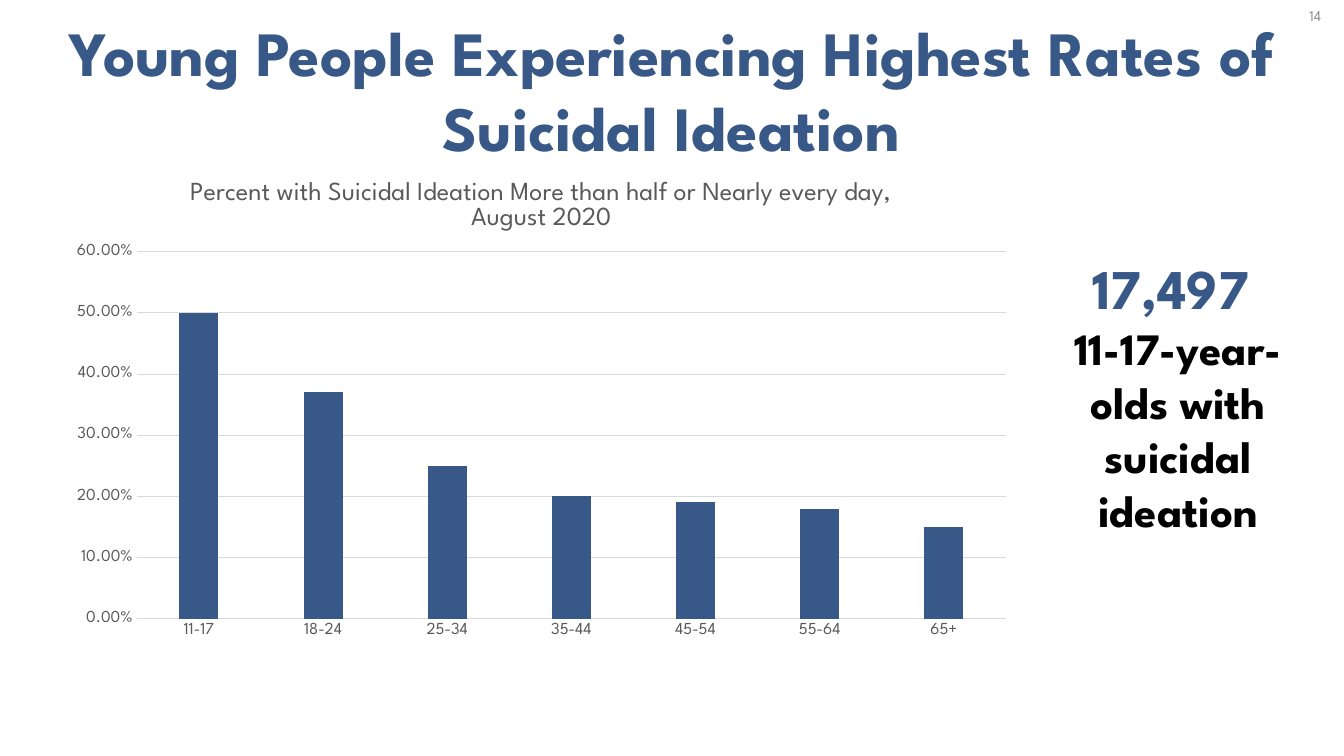
from dataclasses import dataclass

from lxml.etree import SubElement
from pptx import Presentation
from pptx.chart.data import CategoryChartData
from pptx.dml.color import RGBColor
from pptx.enum.chart import XL_CHART_TYPE, XL_TICK_MARK
from pptx.enum.text import MSO_ANCHOR, PP_ALIGN
from pptx.oxml.ns import qn
from pptx.util import Inches, Pt

FONT = "League Spartan"
BLUE, BLACK, GREY, PALE, RULE = "385988", "000000", "595959", "8C8C8C", "D9D9D9"


@dataclass
class Line:
    text: str
    size: float
    color: str
    bold: bool = True


@dataclass
class Label:
    box: tuple[float, float, float, float]
    lines: list[Line]
    anchor: MSO_ANCHOR = MSO_ANCHOR.MIDDLE


LABELS = [
    Label((0.56, 0.52, 12.2, 0.72),
          [Line("Young People Experiencing Highest Rates of Suicidal Ideation", 45, BLUE)]),
    Label((12.76, 0, 0.57, 0.31), [Line("14", 10.7, PALE, False)]),
    Label((10.17, 2.47, 3.03, 2.93),
          [Line("17,497 ", 40, BLUE),
           Line("11-17-year-olds with suicidal ideation", 32, BLACK)], MSO_ANCHOR.TOP),
]

RATES = {"11-17": 0.5, "18-24": 0.37, "25-34": 0.25, "35-44": 0.2,
         "45-54": 0.19, "55-64": 0.18, "65+": 0.15}
PLOT = {"x": 0.082, "y": 0.191, "w": 0.898, "h": 0.749}


def rgb(code: str) -> RGBColor:
    return RGBColor.from_string(code)


def style(font, size: float, color: str, bold: bool = False) -> None:
    font.name, font.size, font.bold = FONT, Pt(size), bold
    font.color.rgb = rgb(color)


def write(para, text: str, **look) -> None:
    para.alignment = PP_ALIGN.CENTER
    run = para.add_run()
    run.text = text
    style(run.font, **look)


def draw_label(slide, label: Label) -> None:
    frame = slide.shapes.add_textbox(*map(Inches, label.box)).text_frame
    frame.word_wrap = True
    frame.vertical_anchor = label.anchor
    for i, line in enumerate(label.lines):
        para = frame.add_paragraph() if i else frame.paragraphs[0]
        write(para, line.text, size=line.size, color=line.color, bold=line.bold)


def set_plot(chart) -> None:
    """Fix the inner plot area as shares of the chart."""
    area = chart.plots[0]._element.getparent()
    layout = area.find(qn("c:layout"))
    if layout is None:
        layout = SubElement(area, qn("c:layout"))
        area.insert(0, layout)
    manual = SubElement(layout, qn("c:manualLayout"))
    modes = {"layoutTarget": "inner", "xMode": "edge", "yMode": "edge"}
    for tag, val in (modes | PLOT).items():
        SubElement(manual, qn(f"c:{tag}")).set("val", str(val))


def draw_chart(slide) -> None:
    data = CategoryChartData(number_format="0.00%")
    data.categories = list(RATES)
    data.add_series("Series 1", list(RATES.values()))
    box = map(Inches, (0.57, 1.57, 9.6, 4.86))
    chart = slide.shapes.add_chart(XL_CHART_TYPE.COLUMN_CLUSTERED, *box, data).chart
    style(chart.font, 10, BLACK)
    chart.has_legend = False
    write(chart.chart_title.text_frame.paragraphs[0],
          "Percent with Suicidal Ideation More than half or Nearly every day, August 2020",
          size=18.6, color=GREY)

    # Columns
    plot = chart.plots[0]
    plot.gap_width, plot.overlap, plot.vary_by_categories = 219, -27, False
    fill = plot.series[0].format.fill
    fill.solid()
    fill.fore_color.rgb = rgb(BLUE)

    # Axes and grid
    cat, val = chart.category_axis, chart.value_axis
    for axis in (cat, val):
        axis.major_tick_mark = axis.minor_tick_mark = XL_TICK_MARK.NONE
        style(axis.tick_labels.font, 12, GREY)
    val.minimum_scale, val.maximum_scale, val.major_unit = 0, 0.6, 0.1
    val.tick_labels.number_format = "0.00%"
    val.tick_labels.number_format_is_linked = False
    val.format.line.fill.background()
    for part in (cat, val.major_gridlines):
        part.format.line.width = Pt(0.75)
        part.format.line.color.rgb = rgb(RULE)
    set_plot(chart)


def main() -> None:
    deck = Presentation()
    deck.slide_width, deck.slide_height = Inches(13.33), Inches(7.5)
    slide = deck.slides.add_slide(deck.slide_layouts[6])
    draw_chart(slide)
    for label in LABELS:
        draw_label(slide, label)
    deck.save("out.pptx")


if __name__ == "__main__":
    main()
